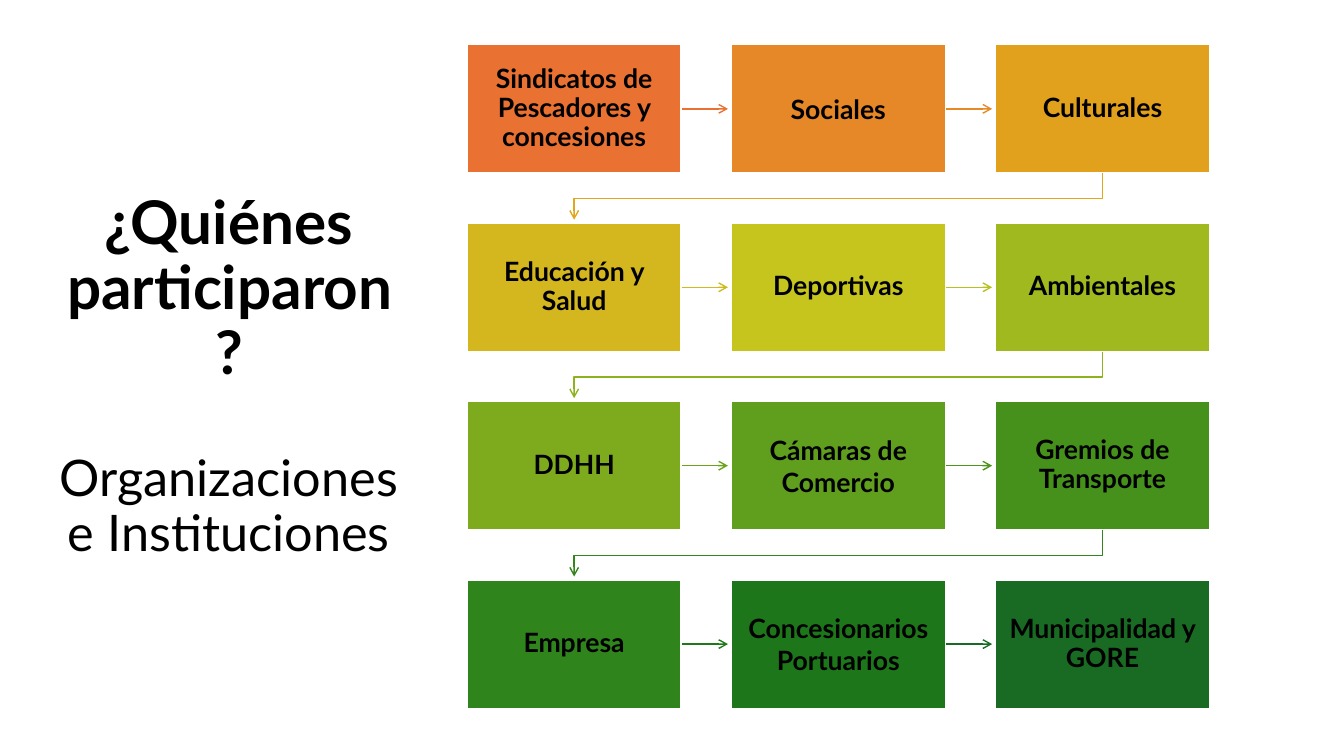
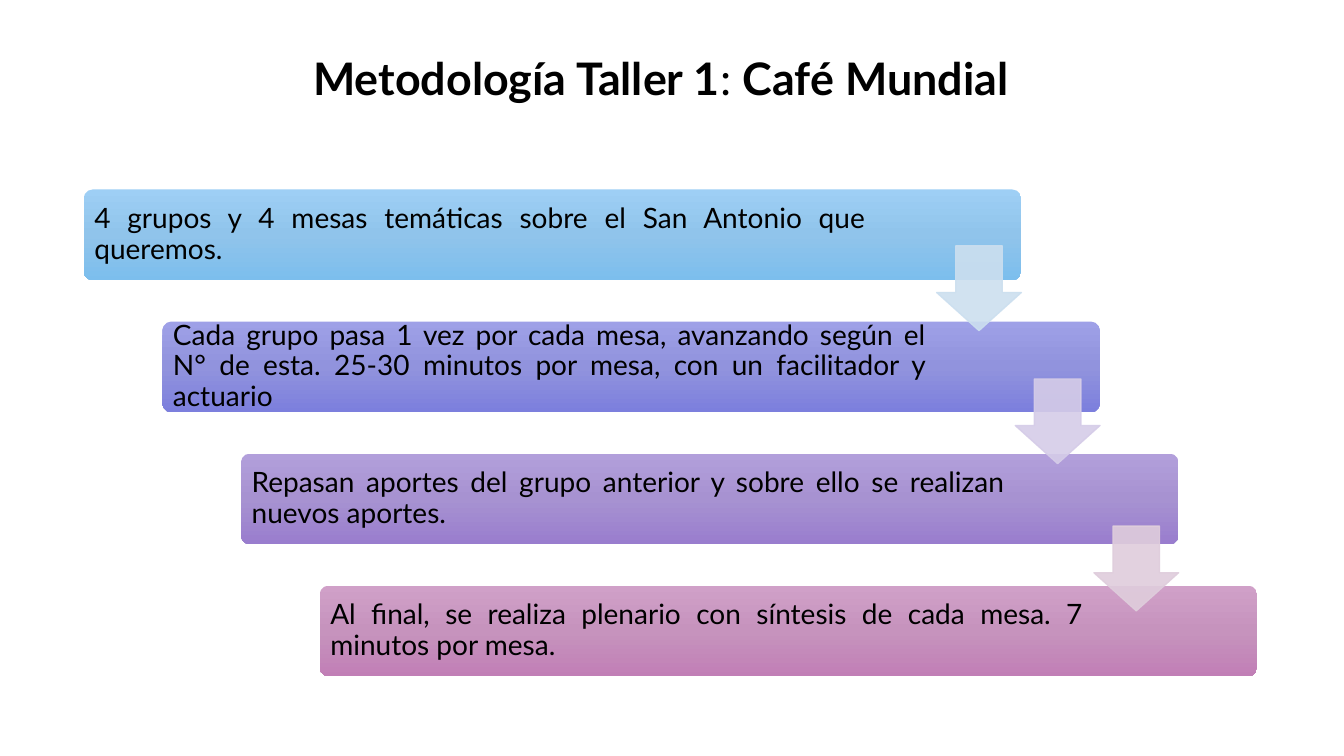
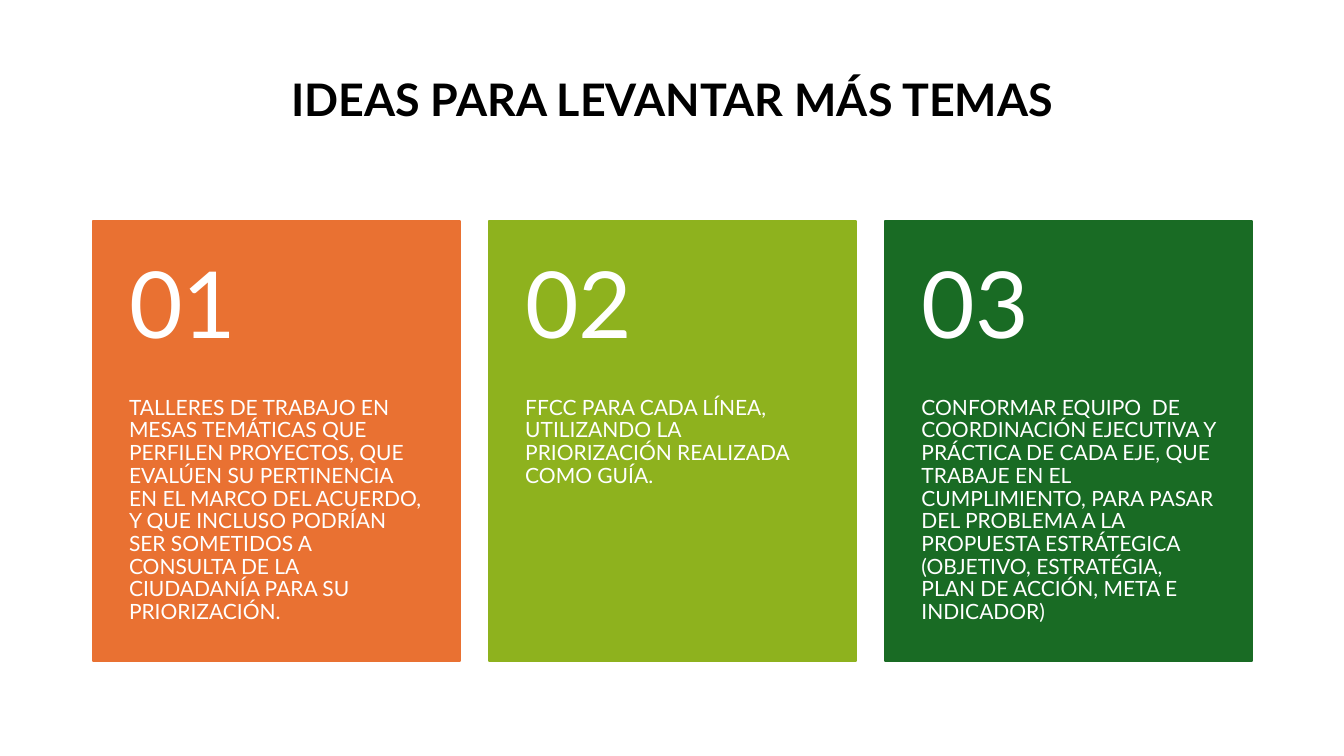
from copy import deepcopy
from dataclasses import dataclass

from lxml.etree import SubElement
from pptx import Presentation
from pptx.dml.color import RGBColor
from pptx.enum.shapes import MSO_CONNECTOR, MSO_SHAPE
from pptx.enum.text import MSO_ANCHOR, MSO_AUTO_SIZE, PP_ALIGN
from pptx.oxml.ns import qn
from pptx.util import Inches, Pt


@dataclass(frozen=True)
class Theme:
    font: str = "Lato"
    dark: str = "000000"
    light: str = "FFFFFF"
    lead_size: int = 43
    sublead_size: int = 36
    title_size: int = 32
    box_size: int = 19
    step_size: int = 20
    number_size: int = 66
    card_size: int = 15
    spacing: float = 0.9


THEME = Theme()
SLIDE_WIDTH, SLIDE_HEIGHT = 13.33, 7.5
TITLE_ONLY = 5

LEAD = "¿Quiénes participaron?"
SUBLEAD = "Organizaciones e Instituciones"
GROUPS = [
    ("Sindicatos de Pescadores y concesiones", "E97132", "E97132", 0.9),
    ("Sociales", "E68828", "E58A27", 1),
    ("Culturales", "E2A11D", "E0A61D", 0.9),
    ("Educación y Salud", "D4B61E", "D0BB1E", 0.9),
    ("Deportivas", "C6C51E", "B7C11E", 0.9),
    ("Ambientales", "A0B91E", "8EB21E", 0.9),
    ("DDHH", "7EAB1E", "6BA31D", 0.9),
    ("Cámaras de Comercio", "609E1D", "4D951D", 1),
    ("Gremios de Transporte", "46911C", "34861C", 0.9),
    ("Empresa", "2F841C", "1F791A", 0.9),
    ("Concesionarios Portuarios", "1D771A", "196B24", 1),
    ("Municipalidad y GORE", "196B24", None, 0.9),
]

METHOD_TITLE = [("Metodología Taller 1", True), (": ", False), ("Café Mundial", True)]
STEPS = [
    ("4 grupos y 4 mesas temáticas sobre el San Antonio que queremos.",
     ("9ECFF5", "90C4EB", "7CBEED"), 1.52),
    ("Cada grupo pasa 1 vez por cada mesa, avanzando según el N° de esta. "
     "25-30 minutos por mesa, con un facilitador y actuario",
     ("9EA0E7", "9193DD", "7C7FDD"), 1.7),
    ("Repasan aportes del grupo anterior y sobre ello se realizan nuevos aportes.",
     ("B29FDB", "A792D1", "997DCE"), 1.7),
    ("Al final, se realiza plenario con síntesis de cada mesa. 7 minutos por mesa.",
     ("D0A0C8", "C693BD", "C17FB6"), 1.7),
]
STEP_ARROWS = [("CCDFEF", 2.44), ("D5CCE8", 3.76), ("DFCDDC", 5.22)]

IDEAS_TITLE = [("IDEAS PARA LEVANTAR MÁS TEMAS", True)]
IDEAS = [
    ("01", "E97132",
     "TALLERES DE TRABAJO EN MESAS TEMÁTICAS QUE PERFILEN PROYECTOS, QUE EVALÚEN "
     "SU PERTINENCIA EN EL MARCO DEL ACUERDO, Y QUE INCLUSO PODRÍAN SER SOMETIDOS "
     "A CONSULTA DE LA CIUDADANÍA PARA SU PRIORIZACIÓN."),
    ("02", "8EB21E",
     "FFCC PARA CADA LÍNEA, UTILIZANDO LA PRIORIZACIÓN REALIZADA COMO GUÍA."),
    ("03", "196B24",
     "CONFORMAR EQUIPO  DE COORDINACIÓN EJECUTIVA Y PRÁCTICA DE CADA EJE, QUE "
     "TRABAJE EN EL CUMPLIMIENTO, PARA PASAR DEL PROBLEMA A LA PROPUESTA "
     "ESTRÁTEGICA (OBJETIVO, ESTRATÉGIA, PLAN DE ACCIÓN, META E INDICADOR)"),
]


def rgb(value):
    return RGBColor.from_string(value)


def style(paragraph, size, color=THEME.dark, bold=False, align=PP_ALIGN.CENTER,
          spacing=THEME.spacing):
    paragraph.alignment = align
    paragraph.line_spacing = spacing
    font = paragraph.font
    font.name, font.size, font.bold = THEME.font, Pt(size), bold
    font.color.rgb = rgb(color)


def set_frame(frame, insets, anchor):
    frame.word_wrap = True
    frame.auto_size = MSO_AUTO_SIZE.NONE
    frame.vertical_anchor = anchor
    (frame.margin_left, frame.margin_top,
     frame.margin_right, frame.margin_bottom) = map(Inches, insets)


def write(shape, text, size, insets, anchor=MSO_ANCHOR.MIDDLE, **options):
    frame = shape.text_frame
    set_frame(frame, insets, anchor)
    frame.text = text
    style(frame.paragraphs[0], size, **options)


def add_block(slide, kind, box, fill=None, line=None, line_width=1.5):
    shape = slide.shapes.add_shape(kind, *map(Inches, box))
    shape.shadow.inherit = False
    if fill:
        shape.fill.solid()
        shape.fill.fore_color.rgb = rgb(fill)
    if line:
        shape.line.color.rgb = rgb(line)
        shape.line.width = Pt(line_width)
    else:
        shape.line.fill.background()
    return shape


def place_title(slide, box):
    title = slide.shapes.title
    title.left, title.top, title.width, title.height = map(Inches, box)
    set_frame(title.text_frame, (0.1, 0.05, 0.1, 0.05), MSO_ANCHOR.MIDDLE)
    return title.text_frame


def add_title(slide, box, runs):
    paragraph = place_title(slide, box).paragraphs[0]
    style(paragraph, THEME.title_size)
    for text, bold in runs:
        run = paragraph.add_run()
        run.text, run.font.bold = text, bold


def finish_arrow(shape, color):
    shape.line.color.rgb = rgb(color)
    shape.line.width = Pt(1)
    SubElement(shape.line._get_or_add_ln(), qn("a:tailEnd"), type="arrow")


def add_straight_arrow(slide, start_box, length, color):
    start = start_box.left + start_box.width
    middle = start_box.top + start_box.height // 2
    connector = slide.shapes.add_connector(
        MSO_CONNECTOR.STRAIGHT, start, middle, start + Inches(length), middle)
    connector.begin_connect(start_box, 3)
    finish_arrow(connector, color)
    SubElement(connector._element.spPr, qn("a:effectLst"))


def add_return_arrow(slide, start, end, bend, color):
    points = [start, (start[0], bend), (end[0], bend), end]
    corners = [(Inches(x), Inches(y)) for x, y in points]
    builder = slide.shapes.build_freeform(*corners[0], scale=1.0)
    builder.add_line_segments(corners[1:], close=False)
    shape = builder.convert_to_shape()
    shape.fill.background()
    shape.shadow.inherit = False
    finish_arrow(shape, color)


def fill_gradient(shape, colors):
    shape.fill.gradient()
    shape.fill.gradient_angle = 270
    stop_list = shape._element.spPr.find(".//" + qn("a:gsLst"))
    stop_list.insert(1, deepcopy(stop_list[0]))
    for index, (stop, color) in enumerate(zip(shape.fill.gradient_stops, colors)):
        stop.color.rgb = rgb(color)
        stop.position = index / (len(colors) - 1)


def build_participants(slide):
    frame = place_title(slide, (0.44, 1.27, 3.66, 4.95))
    frame.text = LEAD
    style(frame.paragraphs[0], THEME.lead_size, bold=True)
    sublead = frame.add_paragraph()
    sublead.text = SUBLEAD
    style(sublead, THEME.sublead_size)
    sublead.space_before = Pt(46.5)

    columns, left, top = 3, 4.63, 0.44
    width, height, column_step, row_step = 2.13, 1.28, 2.62, 1.77
    for index, (text, fill, arrow, spacing) in enumerate(GROUPS):
        row, column = divmod(index, columns)
        x, y = left + column * column_step, top + row * row_step
        box = add_block(slide, MSO_SHAPE.RECTANGLE, (x, y, width, height), fill, THEME.light)
        write(box, text, THEME.box_size, (0.1, 0.11, 0.1, 0.11), bold=True, spacing=spacing)
        if not arrow:
            continue
        if column < columns - 1:
            add_straight_arrow(slide, box, 0.46, arrow)
        else:
            bottom = y + height
            add_return_arrow(slide, (x + width / 2, bottom),
                             (left + width / 2, bottom + 0.46), bottom + 0.25, arrow)


def build_method(slide):
    add_title(slide, (1.61, 0.37, 9.89, 0.87), METHOD_TITLE)
    left, top, width, height = 0.83, 1.88, 9.3, 0.9
    shift, drop, arrow_size = 0.78, 1.31, 0.84
    for index, (text, colors, right_inset) in enumerate(STEPS):
        bar = add_block(slide, MSO_SHAPE.ROUNDED_RECTANGLE,
                        (left + index * shift, top + index * drop, width, height))
        bar.adjustments[0] = 0.1
        fill_gradient(bar, colors)
        write(bar, text, THEME.step_size, (0.08, 0.08, right_inset, 0.08),
              align=PP_ALIGN.JUSTIFY)
    for index, (color, arrow_top) in enumerate(STEP_ARROWS):
        x = left + index * shift + width - arrow_size
        arrow = add_block(slide, MSO_SHAPE.DOWN_ARROW,
                          (x, arrow_top, arrow_size, arrow_size), color, color, 1)
        arrow.adjustments[0], arrow.adjustments[1] = 0.55, 0.45
        for tint in arrow._element.spPr.iter(qn("a:srgbClr")):
            SubElement(tint, qn("a:alpha"), val="90000")


def build_ideas(slide):
    left, top, total, height = 0.92, 2.19, 11.5, 4.37
    width, head = 3.64, 1.75
    step = (total - width) / (len(IDEAS) - 1)
    add_title(slide, (left, 0.61, total, 0.8), IDEAS_TITLE)
    for index, (number, color, text) in enumerate(IDEAS):
        x = left + index * step
        card = add_block(slide, MSO_SHAPE.RECTANGLE, (x, top, width, height), color, color)
        write(card, text, THEME.card_size, (0.36, head, 0.36, 0.36), MSO_ANCHOR.TOP,
              color=THEME.light, align=PP_ALIGN.LEFT)
        label = slide.shapes.add_textbox(*map(Inches, (x, top, width, head)))
        write(label, number, THEME.number_size, (0.36, 0.18, 0.36, 0.18),
              color=THEME.light, align=PP_ALIGN.LEFT)


def main():
    presentation = Presentation()
    presentation.slide_width = Inches(SLIDE_WIDTH)
    presentation.slide_height = Inches(SLIDE_HEIGHT)
    for build in (build_participants, build_method, build_ideas):
        build(presentation.slides.add_slide(presentation.slide_layouts[TITLE_ONLY]))
    presentation.save("out.pptx")


if __name__ == "__main__":
    main()
